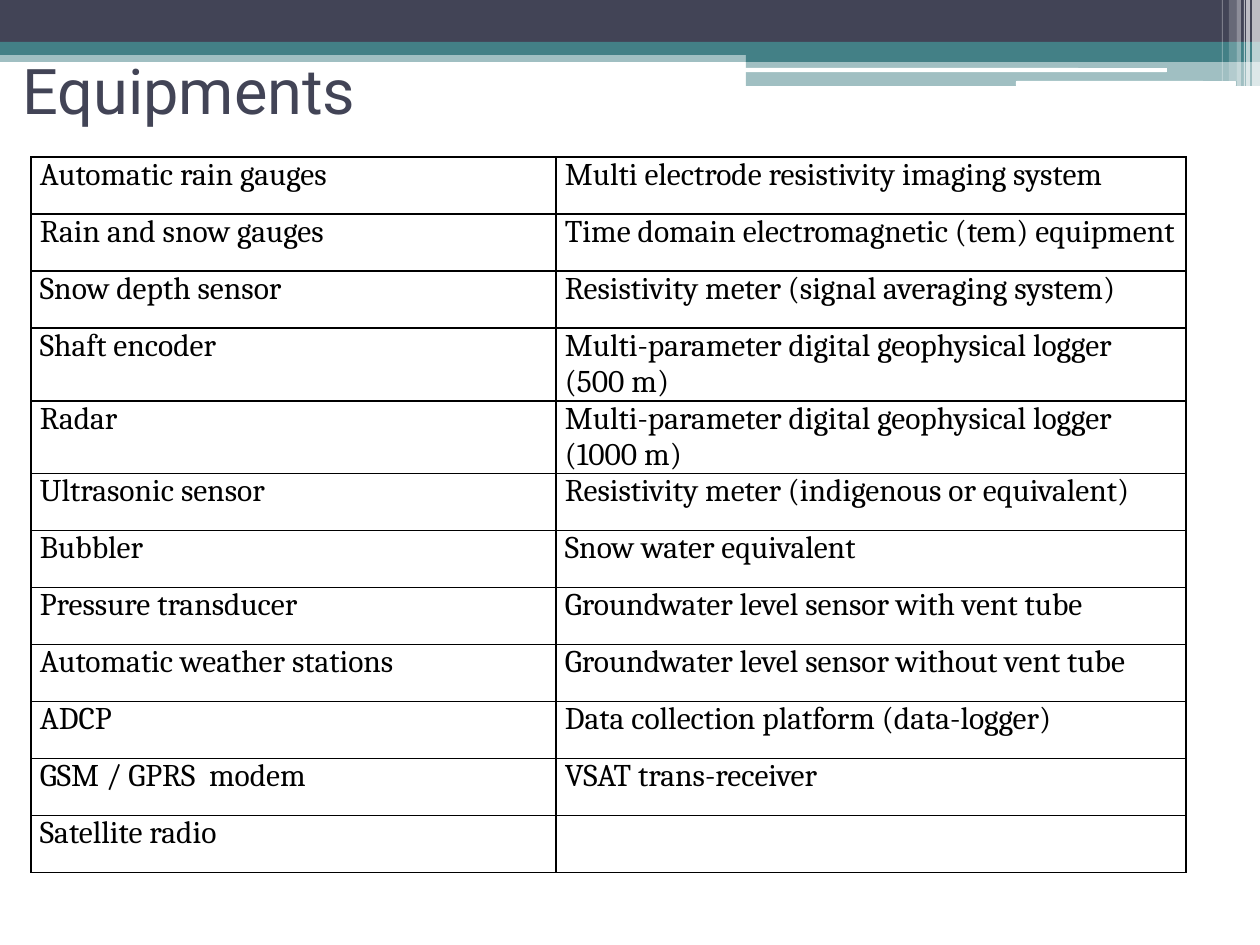
"""Build the equipment list slide: banded header, title and a two-column table."""
import lxml.etree
import pptx
import pptx.dml.color
import pptx.enum.shapes
import pptx.enum.text
import pptx.oxml
import pptx.oxml.ns
import pptx.util

SCALE = 914400 / 126


class Theme:
    navy = "424456"
    teal = "438086"
    white = "FFFFFF"
    black = "000000"
    head = "Roboto"
    body = "Cambria"
    big = pptx.util.Pt(36)
    small = pptx.util.Pt(18)


def px(*nums):
    return [pptx.util.Emu(round(n * SCALE)) for n in nums]


def style(para, face, size, color):
    para.font.name = face
    para.font.size = size
    para.font.color.rgb = pptx.dml.color.RGBColor.from_string(color)
    para.alignment = pptx.enum.text.PP_ALIGN.LEFT


deck = pptx.Presentation()
deck.slide_width, deck.slide_height = px(1260, 945)
slide = deck.slides.add_slide(deck.slide_layouts[5])
kinds = pptx.enum.shapes.MSO_SHAPE
qn = pptx.oxml.ns.qn

bands = [
    (0, 50, 1260, 12, Theme.teal, 50),
    (0, 0, 1260, 43, Theme.navy, 100),
    (0, 42, 1260, 13, Theme.teal, 100),
    (746, 49, 514, 13, Theme.teal, 100),
    (746, 61, 514, 25, Theme.teal, 50),
]
pills = [
    (745, 68, 422, 4, Theme.white, 100),
    (1016, 81, 220, 5, Theme.white, 100),
]
stripes = [
    (left, 0, width, height, Theme.white, alpha)
    for left, width, height, alpha in [
        (1252, 8, 86, 65), (1246, 4, 86, 65), (1244, 1, 86, 60),
        (1237, 4, 86, 40), (1229, 8, 81, 20), (1222, 1, 81, 30),
    ]
]
for kind, group in [(kinds.RECTANGLE, bands), (kinds.ROUNDED_RECTANGLE, pills),
                    (kinds.RECTANGLE, stripes)]:
    for *box, color, alpha in group:
        bar = slide.shapes.add_shape(kind, *px(*box))
        bar.shadow.inherit = False
        bar.line.fill.background()
        bar.fill.solid()
        bar.fill.fore_color.rgb = pptx.dml.color.RGBColor.from_string(color)
        if alpha < 100:
            tint = bar._element.spPr.find(".//" + qn("a:srgbClr"))
            lxml.etree.SubElement(tint, qn("a:alpha"), val=str(alpha * 1000))

title = slide.shapes.title
title.left, title.top, title.width, title.height = px(10, 42, 1134, 94)
title.text_frame.text = "Equipments"
title.text_frame.vertical_anchor = pptx.enum.text.MSO_ANCHOR.MIDDLE
style(title.text_frame.paragraphs[0], Theme.head, Theme.big, Theme.navy)
slide.shapes._spTree.append(title._element)

items = [
    ("Automatic rain gauges", "Multi electrode resistivity imaging system"),
    ("Rain and snow gauges", "Time domain electromagnetic (tem) equipment"),
    ("Snow depth sensor", "Resistivity meter (signal averaging system)"),
    ("Shaft encoder", "Multi-parameter digital geophysical logger (500 m)"),
    ("Radar", "Multi-parameter digital geophysical logger (1000 m)"),
    ("Ultrasonic sensor", "Resistivity meter (indigenous or equivalent)"),
    ("Bubbler", "Snow water equivalent"),
    ("Pressure transducer", "Groundwater level sensor with vent tube"),
    ("Automatic weather stations", "Groundwater level sensor without vent tube"),
    ("ADCP", "Data collection platform (data-logger)"),
    ("GSM / GPRS  modem", "VSAT trans-receiver"),
    ("Satellite radio", ""),
]
table = slide.shapes.add_table(len(items), 2, *px(31, 157, 1155, 57 * len(items))).table
table.first_row = table.horz_banding = False
for col, width in zip(table.columns, px(525, 630)):
    col.width = width
for row, texts in zip(table.rows, items):
    row.height = px(57)[0]
    for cell, text in zip(row.cells, texts):
        cell.text = text
        cell.margin_left, cell.margin_right, cell.margin_top, cell.margin_bottom = px(9, 9, 0, 0)
        style(cell.text_frame.paragraphs[0], Theme.body, Theme.small, Theme.black)
        cell.fill.background()
        for spot, side in enumerate("LRTB"):
            edge = lxml.etree.Element(qn("a:ln" + side), w="12700")
            ink = lxml.etree.SubElement(edge, qn("a:solidFill"))
            lxml.etree.SubElement(ink, qn("a:srgbClr"), val=Theme.black)
            cell._tc.tcPr.insert(spot, edge)

deck.save("out.pptx")
